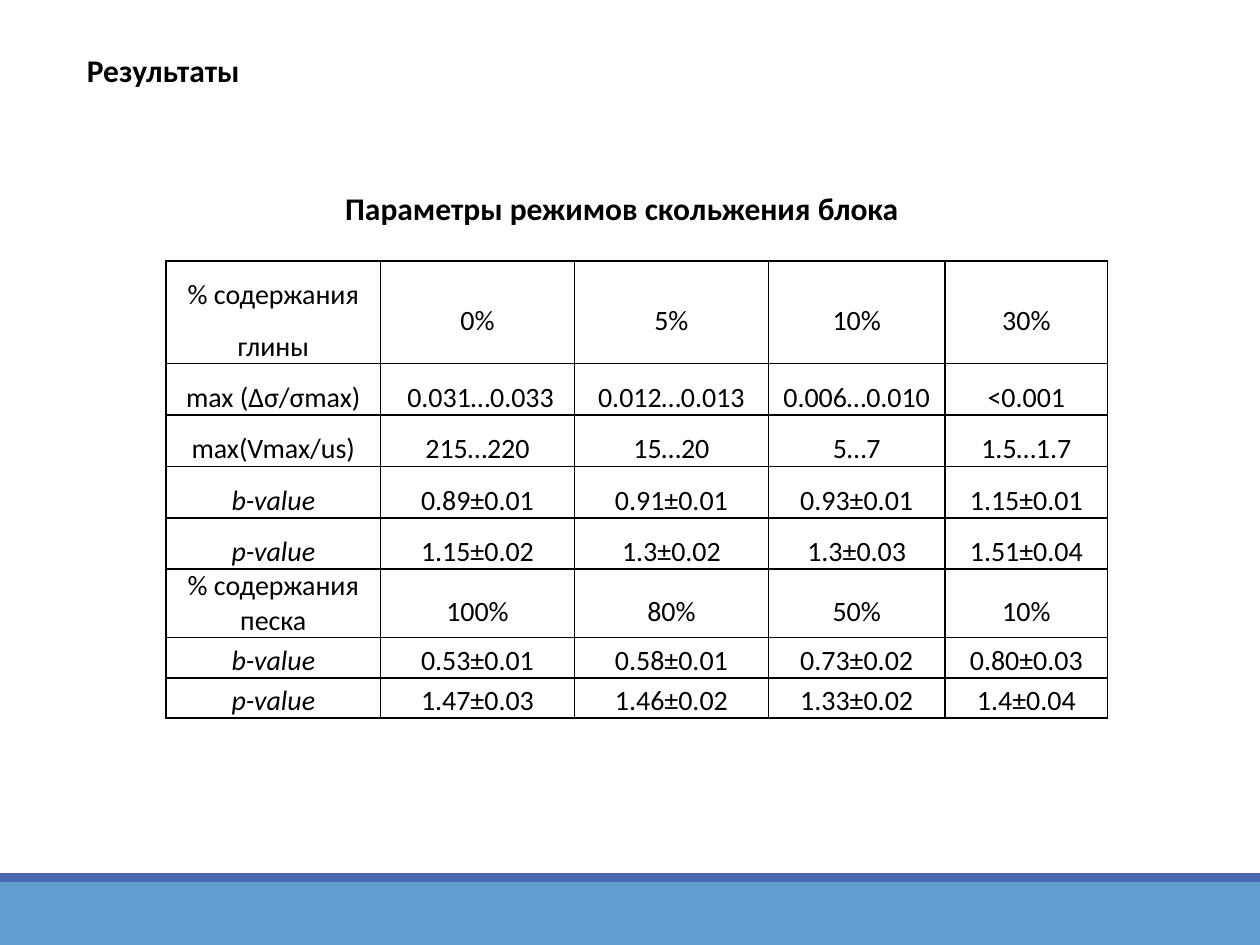
from lxml import etree
from pptx import Presentation
from pptx import util as u
from pptx.dml.color import RGBColor
from pptx.enum import shapes, text
from pptx.oxml.ns import qn

BLACK = RGBColor(0x00, 0x00, 0x00)
SKY = RGBColor(0x62, 0x9D, 0xD1)
NAVY = RGBColor(0x4A, 0x66, 0xAC)
FONT = "Calibri"

COLUMN_WIDTHS = [4.32, 3.91, 3.91, 3.56, 3.28]
ROW_HEIGHTS = [2.03, 1.01, 1.01, 1.01, 1.01, 1.35, 0.81, 0.81]
RESULTS = [
    ["% содержания глины", "0%", "5%", "10%", "30%"],
    ["max (Δσ/σmax)", " 0.031…0.033", "0.012…0.013", "0.006…0.010", "<0.001"],
    ["max(Vmax/us)", "215…220", "15…20", "5…7", "1.5…1.7"],
    ["b-value", "0.89±0.01", "0.91±0.01", "0.93±0.01", "1.15±0.01"],
    ["p-value", "1.15±0.02", "1.3±0.02", "1.3±0.03", "1.51±0.04"],
    ["% содержания песка", "100%", "80%", "50%", "10%"],
    ["b-value", "0.53±0.01", "0.58±0.01", "0.73±0.02", "0.80±0.03"],
    ["p-value", "1.47±0.03", "1.46±0.02", "1.33±0.02", "1.4±0.04"],
]
SAND_ROW = 5

CLAY_CELL = {
    "vertical_anchor": text.MSO_ANCHOR.MIDDLE,
    "margin_left": u.Cm(0.18), "margin_right": u.Cm(0.18),
    "margin_top": 0, "margin_bottom": 0,
}
SAND_CELL = {
    "vertical_anchor": text.MSO_ANCHOR.BOTTOM,
    "margin_left": u.Cm(0.03), "margin_right": u.Cm(0.03),
    "margin_top": u.Cm(0.03), "margin_bottom": 0,
}


def apply(target, values):
    for name, value in values.items():
        setattr(target, name, value)


def write(para, words, size, **style):
    span = para.add_run()
    span.text = words
    apply(span.font, {"name": FONT, "size": u.Pt(size), **style})
    span.font.color.rgb = BLACK


def add_band(page, top, height, color):
    band = page.shapes.add_shape(
        shapes.MSO_SHAPE.RECTANGLE, 0, u.Cm(top), u.Cm(25.4), u.Cm(height))
    band.shadow.inherit = False
    band.fill.solid()
    band.fill.fore_color.rgb = color
    band.line.fill.background()


def add_heading(page, words, left, top, width, height, wrap):
    box = page.shapes.add_textbox(*map(u.Cm, (left, top, width, height)))
    box.text_frame.word_wrap = wrap
    write(box.text_frame.paragraphs[0], words, 18, bold=True)


def add_borders(cell):
    properties = cell._tc.get_or_add_tcPr()
    for side in ("a:lnL", "a:lnR", "a:lnT", "a:lnB"):
        line = etree.SubElement(properties, qn(side), w=str(u.Pt(1)))
        fill = etree.SubElement(line, qn("a:solidFill"))
        etree.SubElement(fill, qn("a:srgbClr"), val=str(BLACK))


def fill_cell(cell, words, row, column):
    add_borders(cell)
    cell.fill.background()
    apply(cell, SAND_CELL if row > SAND_ROW else CLAY_CELL)
    para = cell.text_frame.paragraphs[0]
    spaced = row < SAND_ROW or (row == SAND_ROW and column > 0)
    apply(para, {"alignment": text.PP_ALIGN.CENTER,
                 "line_spacing": 1.5 if spaced else 1.0})
    write(para, words, 16, italic=words.endswith("-value"))


def add_results(page, left, top):
    table = page.shapes.add_table(
        len(RESULTS), len(COLUMN_WIDTHS), u.Cm(left), u.Cm(top),
        u.Cm(sum(COLUMN_WIDTHS)), u.Cm(sum(ROW_HEIGHTS))).table
    apply(table, {"first_row": False, "horz_banding": False})
    for column, width in zip(table.columns, COLUMN_WIDTHS):
        column.width = u.Cm(width)
    for row, height in zip(table.rows, ROW_HEIGHTS):
        row.height = u.Cm(height)
    for row, entries in enumerate(RESULTS):
        for column, words in enumerate(entries):
            fill_cell(table.cell(row, column), words, row, column)


def main():
    deck = Presentation()
    apply(deck, {"slide_width": u.Cm(25.4), "slide_height": u.Cm(19.05)})
    page = deck.slides.add_slide(deck.slide_layouts[6])
    add_band(page, 17.78, 1.27, SKY)
    add_band(page, 17.6, 0.18, NAVY)
    add_results(page, 3.35, 5.26)
    add_heading(page, "Параметры режимов скольжения блока", 6.71, 3.68, 12.8, 1.8, True)
    add_heading(page, "Результаты", 1.5, 0.91, 3.63, 1.02, False)
    deck.save("out.pptx")


if __name__ == "__main__":
    main()
